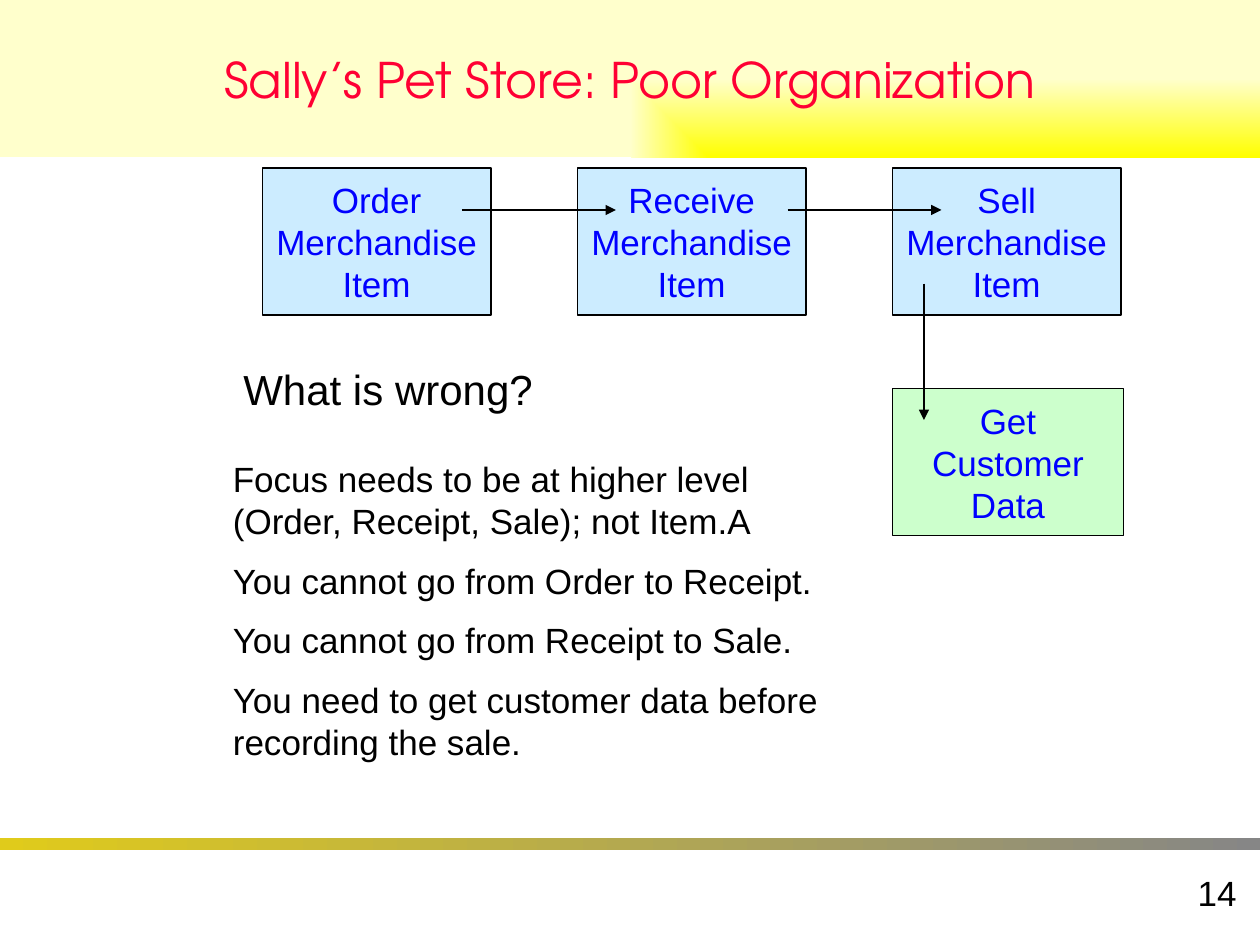
from dataclasses import dataclass

from lxml import etree
from pptx import Presentation
from pptx.dml.color import RGBColor
from pptx.enum.shapes import MSO_CONNECTOR, MSO_SHAPE
from pptx.enum.text import MSO_ANCHOR, MSO_AUTO_SIZE, PP_ALIGN
from pptx.oxml.ns import qn
from pptx.util import Pt

RECTANGLE = MSO_SHAPE.RECTANGLE
STRAIGHT = MSO_CONNECTOR.STRAIGHT
MIDDLE, TOP = MSO_ANCHOR.MIDDLE, MSO_ANCHOR.TOP
LEFT, CENTER, RIGHT = PP_ALIGN.LEFT, PP_ALIGN.CENTER, PP_ALIGN.RIGHT
NO_AUTOFIT = MSO_AUTO_SIZE.NONE
TITLE_ONLY = 5


@dataclass(frozen=True)
class Theme:
    title_font: str = "TeX Gyre Adventor"
    body_font: str = "Arial"
    title_size: int = 28
    question_size: int = 24
    body_size: int = 20
    title: str = "FF0033"
    text: str = "000000"
    box_text: str = "0000FF"
    line: str = "000000"
    item_fill: str = "CCECFF"
    customer_fill: str = "CCFFCC"
    banner: tuple = ("FFFF00", "FFFFCC")
    rule: tuple = ("E0CB1B", "868686")


THEME = Theme()


def color(value):
    return RGBColor.from_string(value)


def points(*values):
    return [Pt(value) for value in values]


def format_paragraph(paragraph, size, text_color, alignment, font=THEME.body_font):
    paragraph.alignment = alignment
    paragraph.font.name = font
    paragraph.font.size = Pt(size)
    paragraph.font.color.rgb = color(text_color)


def fill_gradient(shape, colors):
    shape.fill.gradient()
    shape.fill.gradient_angle = 0
    for stop, value in zip(shape.fill.gradient_stops, colors):
        stop.color.rgb = color(value)


def add_title(slide, text):
    title = slide.shapes.title
    title.left, title.top, title.width, title.height = points(0, 0, 720, 90)
    fill_gradient(title, THEME.banner)
    linear = title.element.spPr.find(".//" + qn("a:lin"))
    corner = etree.Element(qn("a:path"), path="rect")
    etree.SubElement(corner, qn("a:fillToRect"), l="100000", t="100000")
    linear.getparent().replace(linear, corner)
    frame = title.text_frame
    frame.text = text
    frame.auto_size = NO_AUTOFIT
    frame.vertical_anchor = MIDDLE
    format_paragraph(frame.paragraphs[0], THEME.title_size, THEME.title, CENTER,
                     THEME.title_font)


def add_footer_rule(slide):
    rule = slide.shapes.add_shape(RECTANGLE, *points(0, 478.8, 720, 7.2))
    rule.shadow.inherit = False
    rule.line.fill.background()
    fill_gradient(rule, THEME.rule)


def add_text(slide, bounds, lines, size, alignment=LEFT, anchor=TOP):
    frame = slide.shapes.add_textbox(*points(*bounds)).text_frame
    frame.word_wrap = True
    frame.vertical_anchor = anchor
    frame.text = "\n".join(lines)
    for paragraph in frame.paragraphs:
        format_paragraph(paragraph, size, THEME.text, alignment)
        paragraph.space_after = Pt(size / 2)


def add_box(slide, bounds, lines, fill):
    box = slide.shapes.add_shape(RECTANGLE, *points(*bounds))
    box.shadow.inherit = False
    box.fill.solid()
    box.fill.fore_color.rgb = color(fill)
    box.line.color.rgb = color(THEME.line)
    box.line.width = Pt(1)
    frame = box.text_frame
    frame.word_wrap = False
    frame.vertical_anchor = MIDDLE
    frame.text = "\n".join(lines)
    for paragraph in frame.paragraphs:
        format_paragraph(paragraph, THEME.body_size, THEME.box_text, CENTER)


def add_arrow(slide, start, end):
    arrow = slide.shapes.add_connector(STRAIGHT, *points(*start, *end))
    arrow.line.color.rgb = color(THEME.line)
    arrow.line.width = Pt(1)
    etree.SubElement(arrow.line._get_or_add_ln(), qn("a:tailEnd"), type="triangle")
    etree.SubElement(arrow.element.spPr, qn("a:effectLst"))


def main():
    presentation = Presentation()
    presentation.slide_width, presentation.slide_height = points(720, 540)
    slide = presentation.slides.add_slide(presentation.slide_layouts[TITLE_ONLY])

    add_footer_rule(slide)
    add_title(slide, "Sally’s Pet Store: Poor Organization")
    add_text(slide, (563.75, 492, 150, 36), ["14"], THEME.body_size, RIGHT, MIDDLE)

    first_left, step = 150, 180
    for index, action in enumerate(("Order", "Receive", "Sell")):
        add_box(slide, (first_left + index * step, 96, 130.5, 84),
                (action, "Merchandise", "Item"), THEME.item_fill)
    for left in (264, 450):
        add_arrow(slide, (left, 120), (left + 88, 120))
    add_box(slide, (first_left + 2 * step, 222, 132, 84),
            ("Get", "Customer", "Data"), THEME.customer_fill)
    add_arrow(slide, (528, 162), (528, 240))

    add_text(slide, (132, 204, 186, 36), ["What is wrong?"], THEME.question_size)
    add_text(slide, (126, 258, 354, 187), (
        "Focus needs to be at higher level (Order, Receipt, Sale); not Item.A",
        "You cannot go from Order to Receipt.",
        "You cannot go from Receipt to Sale.",
        "You need to get customer data before recording the sale.",
    ), THEME.body_size)

    presentation.save("out.pptx")


if __name__ == "__main__":
    main()
